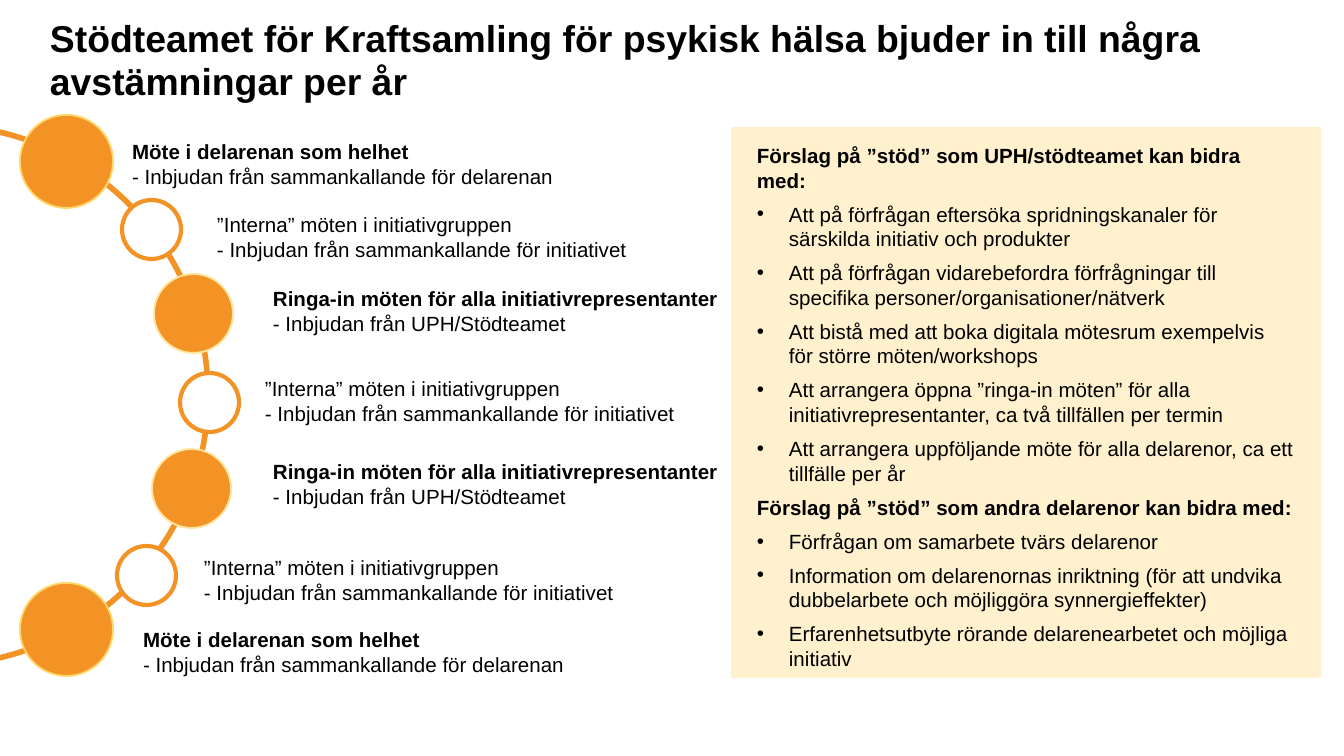
import pptx
import pptx.util
import pptx.dml.color
import pptx.enum.shapes
import pptx.enum.text
from lxml import etree

COLORS = {"orange": "F39325", "cream": "FFF1CE", "gold": "FFD76B",
          "pale": "FFE49D", "white": "FFFFFF", "black": "000000"}
FONT = "Arial"
PX = 914400 / 134.4

TITLE = "Stödteamet för Kraftsamling för psykisk hälsa bjuder in till några avstämningar per år"

MEETINGS = {
    "whole": ("Möte i delarenan som helhet",
              "- Inbjudan från sammankallande för delarenan", True),
    "internal": ("”Interna” möten i initiativgruppen",
                 "- Inbjudan från sammankallande för initiativet", False),
    "call": ("Ringa-in möten för alla initiativrepresentanter",
             "- Inbjudan från UPH/Stödteamet", True),
}
MARKERS = {
    "whole": (93, "orange", "gold", 1),
    "internal": (59, "white", "orange", 2.25),
    "call": (79, "orange", "pale", 1),
}
LABEL_WIDTHS = {"whole": 455, "internal": 431, "call": 487}
TIMELINE = [
    ("whole", (20, 115), (122, 134)),
    ("internal", (122, 200), (207, 207)),
    ("call", (154, 274), (263, 281)),
    ("internal", (180, 373), (255, 371)),
    ("call", (152, 449), (263, 454)),
    ("internal", (117, 546), (194, 550)),
    ("whole", (20, 583), (133, 622)),
]
SUPPORT = [
    ("Förslag på ”stöd” som UPH/stödteamet kan bidra med:", [
        "Att på förfrågan eftersöka spridningskanaler för särskilda initiativ och produkter",
        "Att på förfrågan vidarebefordra förfrågningar till specifika personer/organisationer/nätverk",
        "Att bistå med att boka digitala mötesrum exempelvis för större möten/workshops",
        "Att arrangera öppna ”ringa-in möten” för alla initiativrepresentanter, ca två tillfällen per termin",
        "Att arrangera uppföljande möte för alla delarenor, ca ett tillfälle per år",
    ]),
    ("Förslag på ”stöd” som andra delarenor kan bidra med:", [
        "Förfrågan om samarbete tvärs delarenor",
        "Information om delarenornas inriktning (för att undvika dubbelarbete och möjliggöra synnergieffekter)",
        "Erfarenhetsutbyte rörande delarenearbetet och möjliga initiativ",
    ]),
]


def px(n):
    return round(n * PX)


def rgb(name):
    return pptx.dml.color.RGBColor.from_string(COLORS[name])


def add_shape(s, kind, x, y, w, h, fill, line, width):
    sp = s.shapes.add_shape(kind, px(x), px(y), px(w), px(h))
    sp.shadow.inherit = False
    if fill:
        sp.fill.solid()
        sp.fill.fore_color.rgb = rgb(fill)
    else:
        sp.fill.background()
    sp.line.color.rgb = rgb(line)
    sp.line.width = pptx.util.Pt(width)


def add_bullet(p):
    pPr = p._p.get_or_add_pPr()
    pPr.set("marL", str(px(32)))
    pPr.set("indent", str(-px(32)))
    ns = pptx.oxml.ns.qn
    color = etree.SubElement(pPr, ns("a:buClr"))
    etree.SubElement(color, ns("a:srgbClr"), val=COLORS["black"])
    etree.SubElement(pPr, ns("a:buFont"), typeface=FONT)
    etree.SubElement(pPr, ns("a:buChar"), char="•")


def add_text(s, x, y, w, h, paragraphs, size=11, gap=0, spacing=None, anchor="TOP"):
    tf = s.shapes.add_textbox(px(x), px(y), px(w), px(h)).text_frame
    tf.word_wrap = True
    tf.vertical_anchor = pptx.enum.text.MSO_ANCHOR[anchor]
    tf.margin_left = tf.margin_right = px(10)
    tf.margin_top = tf.margin_bottom = px(5)
    for i, (text, bold, bullet) in enumerate(paragraphs):
        p = tf.paragraphs[0] if i == 0 else tf.add_paragraph()
        if bullet:
            add_bullet(p)
        if i and gap:
            p.space_before = pptx.util.Pt(gap)
        if spacing:
            p.line_spacing = spacing
        r = p.add_run()
        r.text = text
        r.font.name = FONT
        r.font.size = pptx.util.Pt(size)
        r.font.bold = bold
        r.font.color.rgb = rgb("black")


def main():
    prs = pptx.Presentation()
    prs.slide_width, prs.slide_height = px(1344), px(756)
    s = prs.slides.add_slide(prs.slide_layouts[6])
    shapes = pptx.enum.shapes.MSO_SHAPE

    add_shape(s, shapes.RECTANGLE, 732, 128, 588, 549, "cream", "cream", 1)
    add_text(s, 40, 30, 1250, 79, [(TITLE, True, False)],
             size=20, spacing=0.95, anchor="BOTTOM")

    for kind, _, (x, y) in TIMELINE:
        heading, detail, bold = MEETINGS[kind]
        add_text(s, x, y, LABEL_WIDTHS[kind], 62,
                 [(heading, bold, False), (detail, False, False)])

    support = []
    for heading, items in SUPPORT:
        support.append((heading, True, False))
        support += [(item, False, True) for item in items]
    add_text(s, 747, 138, 558, 530, support, gap=5)

    add_shape(s, shapes.OVAL, -332, 125, 540, 540, None, "orange", 3)
    for kind, (x, y), _ in TIMELINE:
        size, fill, line, width = MARKERS[kind]
        add_shape(s, shapes.OVAL, x, y, size, size, fill, line, width)

    prs.save("out.pptx")


if __name__ == "__main__":
    main()
